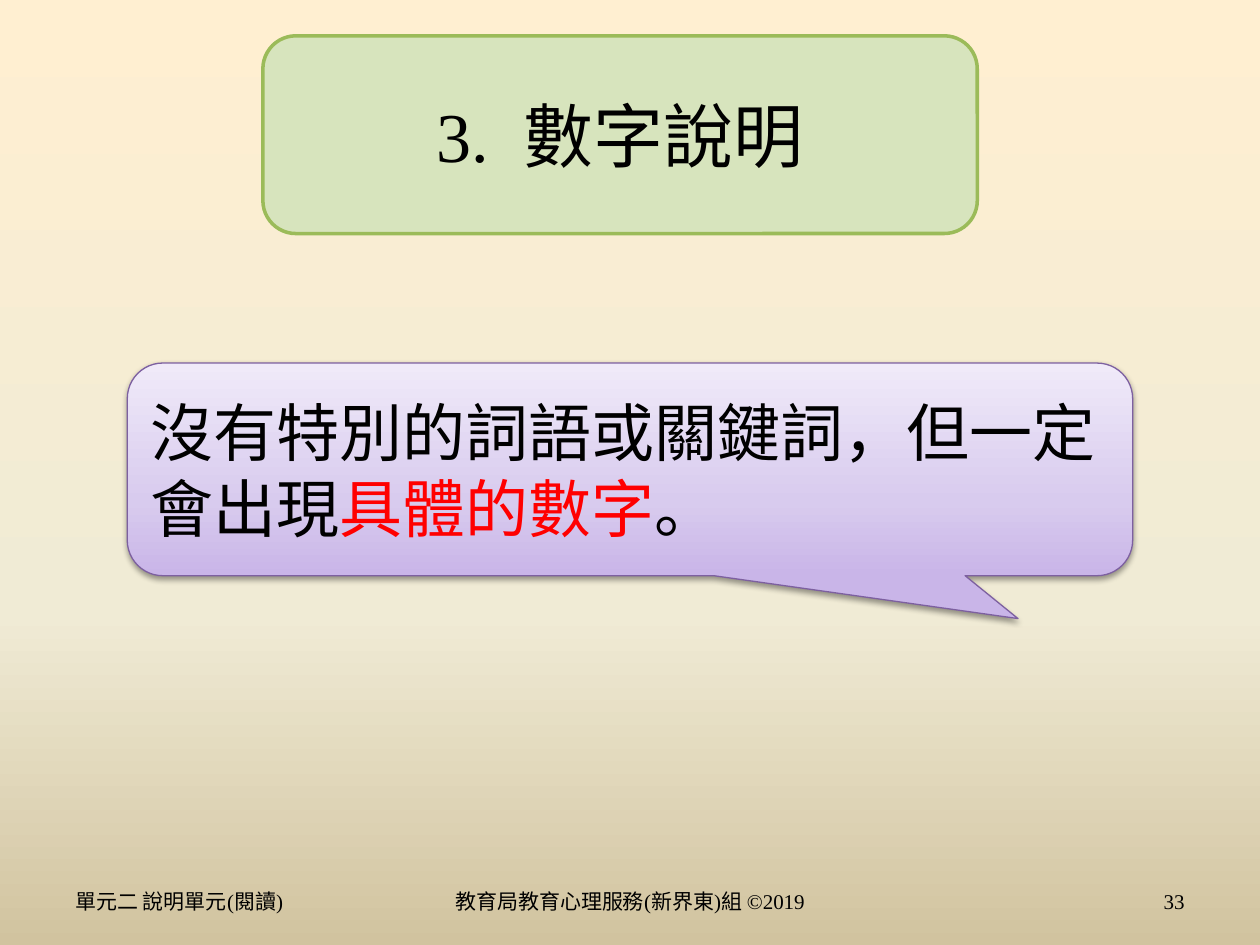
from lxml import etree
from pptx import Presentation
from pptx import util as u
from pptx.dml.color import RGBColor
from pptx.enum import shapes, text
from pptx.oxml import ns

Pt = u.Pt
FONT = "Times New Roman"
BLACK = RGBColor(0x00, 0x00, 0x00)
RED = RGBColor(0xFF, 0x00, 0x00)
GREEN = RGBColor(0x9B, 0xBB, 0x59)
PALE_GREEN = RGBColor(0xD7, 0xE4, 0xBD)
PURPLE = RGBColor(0x7D, 0x60, 0xA0)
SAND = [(0, RGBColor(0xFF, 0xEF, 0xD1)), (65, RGBColor(0xF0, 0xEB, 0xD5)),
        (100, RGBColor(0xD1, 0xC3, 0x9F))]
LILAC = [(0, RGBColor(0xC9, 0xB5, 0xE8)), (35, RGBColor(0xD8, 0xCB, 0xEE)),
         (100, RGBColor(0xF0, 0xEA, 0xF9))]
LEFT, CENTER, RIGHT = (text.PP_ALIGN.LEFT, text.PP_ALIGN.CENTER,
                       text.PP_ALIGN.RIGHT)


def add_xml(parent, tag, **attrs):
    return etree.SubElement(parent, ns.qn(tag),
                            {k: str(v) for k, v in attrs.items()})


class Deck:
    """Holds the font and the current slide."""

    def __init__(self, prs, font):
        self.font = font
        self.slide = prs.slides.add_slide(prs.slide_layouts[6])

    def gradient(self, fill, element, stops, angle):
        """Fill with stops of (percent, colour); angle is counter-clockwise."""
        fill.gradient()
        fill.gradient_angle = angle
        gs_list = element.find(".//" + ns.qn("a:gsLst"))
        for gs in list(gs_list):
            gs_list.remove(gs)
        for pos, color in stops:
            gs = add_xml(gs_list, "a:gs", pos=pos * 1000)
            add_xml(gs, "a:srgbClr", val=color)

    def background(self, stops, angle):
        self.gradient(self.slide.background.fill, self.slide.element,
                      stops, angle)

    def add_runs(self, s, runs, size, align):
        """Fill the shape with one paragraph of (text, colour) runs."""
        tf = s.text_frame
        tf.word_wrap = True
        tf.vertical_anchor = text.MSO_ANCHOR.MIDDLE
        p = tf.paragraphs[0]
        p.alignment = align
        for words, color in runs:
            r = p.add_run()
            r.text = words
            r.font.name = self.font
            r.font.size = Pt(size)
            r.font.color.rgb = color
        return p

    def label(self, words, x, y, w, h, align):
        s = self.slide.shapes.add_textbox(Pt(x), Pt(y), Pt(w), Pt(h))
        self.add_runs(s, [(words, BLACK)], 12, align)

    def shape(self, kind, x, y, w, h, line, width):
        s = self.slide.shapes.add_shape(kind, Pt(x), Pt(y), Pt(w), Pt(h))
        s.shadow.inherit = False
        s.line.color.rgb = line
        s.line.width = Pt(width)
        return s

    def shadow(self, s, opacity, blur, distance):
        """Cast a black shadow straight down."""
        effects = s.element.spPr.find(ns.qn("a:effectLst"))
        shadow = add_xml(effects, "a:outerShdw", blurRad=Pt(blur),
                         dist=Pt(distance), dir=90 * 60000, rotWithShape=0)
        color = add_xml(shadow, "a:srgbClr", val=BLACK)
        add_xml(color, "a:alpha", val=opacity * 1000)

    def title(self, number, words, x, y, w, h):
        s = self.shape(shapes.MSO_SHAPE.ROUNDED_RECTANGLE, x, y, w, h, GREEN, 2)
        s.fill.solid()
        s.fill.fore_color.rgb = PALE_GREEN
        p = self.add_runs(s, [(number, BLACK), (" ", BLACK), (words, BLACK)],
                          40, CENTER)
        gap = p.runs[1]
        gap.font._element.set("spc", "1000")  # widens the gap by 10 pt

    def callout(self, runs, x, y, w, h, adjustments):
        s = self.shape(shapes.MSO_SHAPE.ROUNDED_RECTANGULAR_CALLOUT,
                       x, y, w, h, PURPLE, 0.75)
        for i, value in enumerate(adjustments):
            s.adjustments[i] = value
        self.gradient(s.fill, s.element.spPr, LILAC, 90)
        self.shadow(s, 38, 3.1, 1.6)
        self.add_runs(s, runs, 36, LEFT)


def main():
    prs = Presentation()
    prs.slide_width, prs.slide_height = Pt(720), Pt(540)
    deck = Deck(prs, FONT)
    deck.background(SAND, 270)

    for words, x, w, align in [
            ("單元二 說明單元(閱讀)", 36, 168, LEFT),
            ("教育局教育心理服務(新界東)組 ©2019", 246, 228, CENTER),
            ("33", 516, 168, RIGHT)]:
        deck.label(words, x, 500.5, w, 28.75, align)

    deck.title("3.", "數字說明", 150.25, 20.5, 408.25, 113)
    deck.callout([("沒有特別的詞語或關鍵詞，但一定會出現", BLACK),
                  ("具體的數字", RED), ("。", BLACK)],
                 72.75, 207.5, 574.5, 121.5, (0.386, 0.702, 0.167))
    prs.save("out.pptx")


if __name__ == "__main__":
    main()
